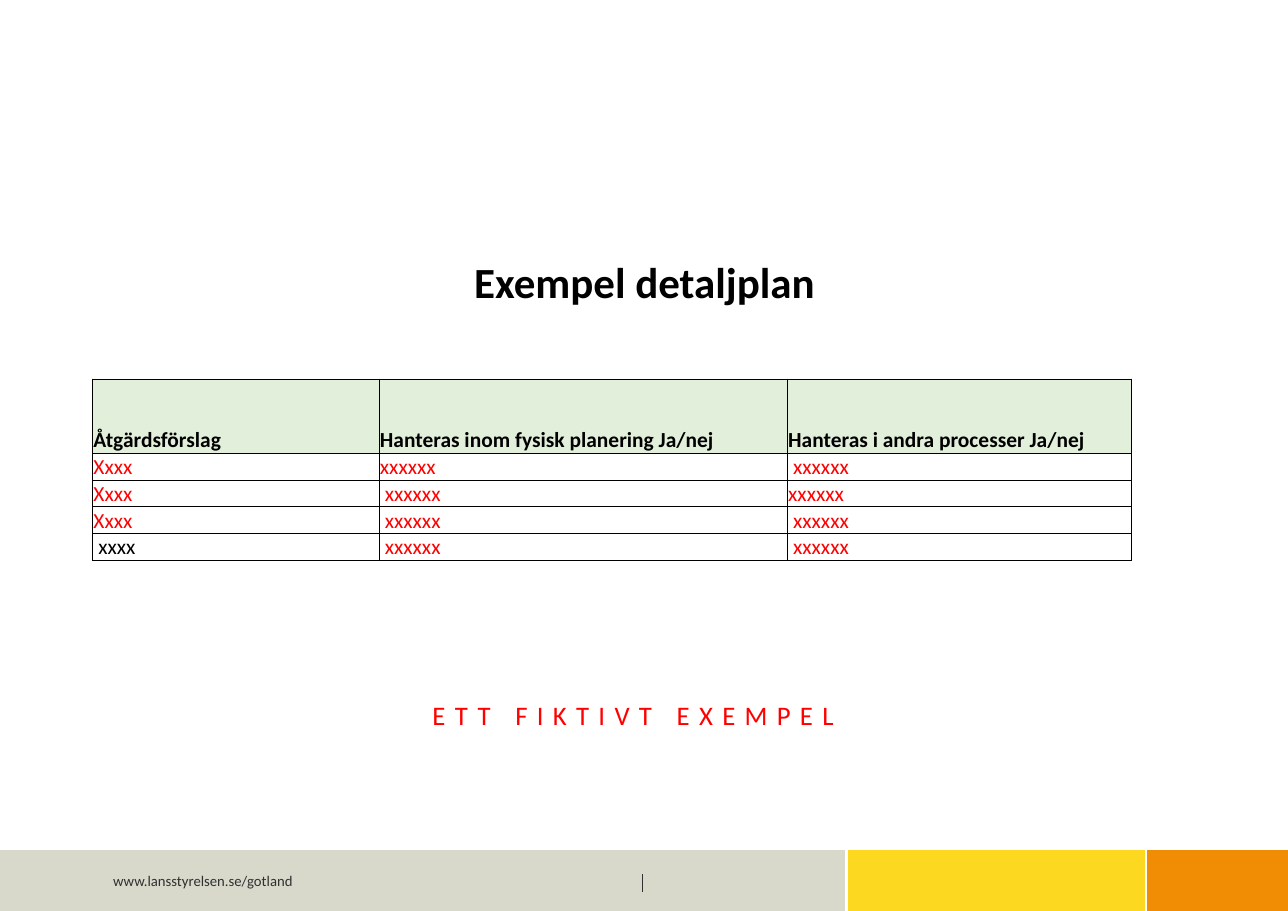
from lxml.etree import SubElement
from pptx import Presentation
from pptx.dml.color import RGBColor
from pptx.enum.shapes import MSO_CONNECTOR, MSO_SHAPE
from pptx.enum.text import MSO_ANCHOR as Anchor, MSO_AUTO_SIZE as AutoSize, PP_ALIGN as Align
from pptx.oxml.ns import qn
from pptx.util import Pt

WIDTH, HEIGHT = 841.68, 595.44
BAND_TOP = 555.6
FONT = "Calibri"
COLOURS = {
    "orange": "F18D05", "yellow": "FCD920", "grey": "D8D8CB", "white": "FFFFFF",
    "footer": "2F3030", "red": "FF0000", "black": "000000", "header": "E2EFDA",
}

HEADERS = ["Åtgärdsförslag", "Hanteras inom fysisk planering Ja/nej",
           "Hanteras i andra processer Ja/nej"]
ROWS = [["Xxxx", "xxxxxx", "xxxxxx"]] * 3 + [["xxxx", "xxxxxx", "xxxxxx"]]
FLUSH_CELLS = {(1, 0), (2, 0), (3, 0), (1, 1), (2, 2)}  # body cells without indent
COLUMN_WIDTHS = [187.2, 266.8, 224.8]
HEADER_HEIGHT, ROW_HEIGHT = 48.4, 17.6
CELL_INDENT = 3.2


def colour(name):
    return RGBColor.from_string(COLOURS[name])


def format_text(para, size, colour_name, bold=False):
    for span in para.runs:
        span.font.name = FONT
        span.font.size = Pt(size)
        span.font.bold = bold
        span.font.color.rgb = colour(colour_name)


def add_band(page, left, width, colour_name):
    band = page.shapes.add_shape(MSO_SHAPE.RECTANGLE, Pt(left), Pt(BAND_TOP),
                                 Pt(width), Pt(HEIGHT - BAND_TOP))
    band.shadow.inherit = False
    band.fill.solid()
    band.fill.fore_color.rgb = colour(colour_name)
    band.line.fill.background()


def add_line(page, start, end, colour_name, width):
    line = page.shapes.add_connector(MSO_CONNECTOR.STRAIGHT,
                                     *(Pt(value) for value in start + end))
    line.line.color.rgb = colour(colour_name)
    line.line.width = Pt(width)
    SubElement(line._element.spPr, qn("a:effectLst"))


def add_text(page, text, left, top, width, height, size, colour_name, bold=False):
    box = page.shapes.add_textbox(Pt(left), Pt(top), Pt(width), Pt(height))
    box.text_frame.text = text
    format_text(box.text_frame.paragraphs[0], size, colour_name, bold)
    return box.text_frame


def set_title(page, text):
    title = page.shapes.title
    title.left, title.top, title.width, title.height = Pt(246.2), Pt(450), Pt(335.5), Pt(27.4)
    frame = title.text_frame
    frame.text = text
    frame.auto_size = AutoSize.NONE
    frame.vertical_anchor = Anchor.BOTTOM
    frame.margin_left = frame.margin_right = frame.margin_top = frame.margin_bottom = 0
    para = frame.paragraphs[0]
    para.alignment = Align.CENTER
    format_text(para, 17.5, "red")
    para.runs[0].font._element.set("spc", "610")


def add_borders(cell):
    properties = cell._tc.get_or_add_tcPr()
    for side in ("lnL", "lnR", "lnT", "lnB"):
        border = SubElement(properties, qn(f"a:{side}"), w=str(Pt(0.5)))
        fill = SubElement(border, qn("a:solidFill"))
        SubElement(fill, qn("a:srgbClr"), val=COLOURS["black"])


def fill_cell(cell, text, colour_name, header, indent):
    cell.text = text
    cell.vertical_anchor = Anchor.BOTTOM
    cell.margin_left = Pt(0.6 + indent)
    cell.margin_right = cell.margin_top = Pt(0.6)
    cell.margin_bottom = 0
    format_text(cell.text_frame.paragraphs[0], 14, colour_name, header)
    add_borders(cell)
    if header:
        cell.fill.solid()
        cell.fill.fore_color.rgb = colour("header")
    else:
        cell.fill.background()


def add_measures_table(page):
    lines = [HEADERS] + ROWS
    heights = [HEADER_HEIGHT] + [ROW_HEIGHT] * len(ROWS)
    table = page.shapes.add_table(len(lines), len(HEADERS), Pt(60.5), Pt(247.7),
                                  Pt(sum(COLUMN_WIDTHS)), Pt(sum(heights))).table
    table.first_row = table.horz_banding = False
    for column, width in zip(table.columns, COLUMN_WIDTHS):
        column.width = Pt(width)
    for r, (texts, height) in enumerate(zip(lines, heights)):
        table.rows[r].height = Pt(height)
        for c, text in enumerate(texts):
            header = r == 0
            colour_name = "black" if header or text == "xxxx" else "red"
            indent = 0 if header or (r, c) in FLUSH_CELLS else CELL_INDENT
            fill_cell(table.cell(r, c), text, colour_name, header, indent)


def add_footer(page):
    add_band(page, 735.8, WIDTH - 735.8, "orange")
    add_band(page, 547.9, 200.2, "yellow")
    add_band(page, 0, 553.7, "grey")
    add_line(page, (0, 555.1), (WIDTH, 555.1), "white", 1.5)
    for x in (553.1, 748.8):
        add_line(page, (x, BAND_TOP), (x, HEIGHT), "white", 1.5)
    address = add_text(page, "www.lansstyrelsen.se/gotland", 66.9, 566.6, 133.9, 18.7,
                       9.6, "footer")
    address.word_wrap = False
    address.auto_size = AutoSize.SHAPE_TO_FIT_TEXT
    add_line(page, (419.8, 571.5), (419.8, 583.2), "footer", 0.5)


def main():
    deck = Presentation()
    deck.slide_width, deck.slide_height = Pt(WIDTH), Pt(HEIGHT)
    page = deck.slides.add_slide(deck.slide_layouts[5])

    # Footer band
    add_footer(page)

    # Title and heading
    set_title(page, "ETT FIKTIVT EXEMPEL")
    heading = add_text(page, "Exempel detaljplan", 154.8, 167.8, 532.8, 83.5,
                       28.1, "black", bold=True)
    heading.word_wrap = True
    heading.margin_top = heading.margin_bottom = Pt(3)
    heading.paragraphs[0].alignment = Align.CENTER
    heading.paragraphs[0].line_spacing = 0.9

    # Table of measures
    add_measures_table(page)

    deck.save("out.pptx")


if __name__ == "__main__":
    main()
